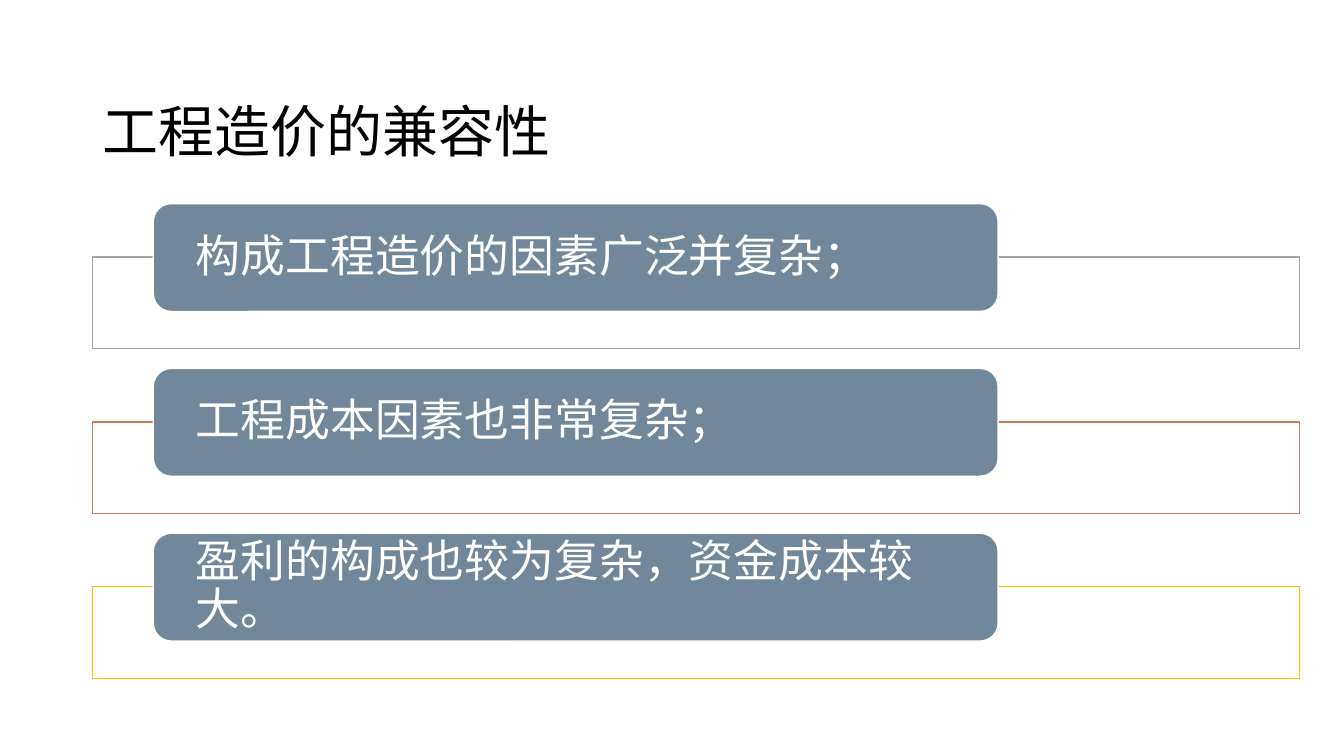
from pptx import Presentation
from pptx.dml.color import RGBColor
from pptx.enum.shapes import MSO_SHAPE
from pptx.enum.text import MSO_ANCHOR, PP_ALIGN
from pptx.oxml.ns import qn
from pptx.util import Inches, Pt

RECTANGLE = MSO_SHAPE.RECTANGLE
ROUNDED = MSO_SHAPE.ROUNDED_RECTANGLE
MIDDLE = MSO_ANCHOR.MIDDLE
LEFT = PP_ALIGN.LEFT

TITLE = "工程造价的兼容性"
FACTORS = [
    ("构成工程造价的因素广泛并复杂；", "A5A5A5"),
    ("工程成本因素也非常复杂；", "C97C5C"),
    ("盈利的构成也较为复杂，资金成本较大。", "FFC000"),
]

THEME = {
    "title_color": "000000", "title_size": 40, "title_font": "Times New Roman",
    "label_color": "FFFFFF", "label_size": 32, "label_font": "Noto Sans CJK SC",
    "east_asian_font": "Noto Sans CJK SC",
    "label_fill": "728799", "white": "FFFFFF", "line_width": 1,
}

FRAME_LEFT, FRAME_WIDTH, FRAME_HEIGHT = 0.92, 11.97, 0.91
LABEL_LEFT, LABEL_WIDTH, LABEL_HEIGHT = 1.52, 8.38, 1.07
FIRST_LABEL_TOP, ROW_PITCH = 2.02, 1.635
FRAME_DROP = 0.53
LABEL_INSET = 0.37


def add_box(slide, kind, left, top, width, height, fill, line):
    box = slide.shapes.add_shape(
        kind, Inches(left), Inches(top), Inches(width), Inches(height))
    box.shadow.inherit = False
    box.fill.solid()
    box.fill.fore_color.rgb = RGBColor.from_string(fill)
    box.line.color.rgb = RGBColor.from_string(line)
    box.line.width = Pt(THEME["line_width"])
    return box


def write(frame, text, role, spacing):
    """Put one left-aligned paragraph in the frame, styled by theme role."""
    frame.text = text
    frame.word_wrap = True
    frame.vertical_anchor = MIDDLE
    paragraph = frame.paragraphs[0]
    paragraph.alignment = LEFT
    paragraph.line_spacing = spacing
    font = paragraph.runs[0].font
    font.name = THEME[role + "_font"]
    font.size = Pt(THEME[role + "_size"])
    font.color.rgb = RGBColor.from_string(THEME[role + "_color"])
    east_asian = font._element.makeelement(
        qn("a:ea"), {"typeface": THEME["east_asian_font"]})
    font._element.find(qn("a:latin")).addnext(east_asian)


def add_factor(slide, row, text, accent):
    label_top = FIRST_LABEL_TOP + row * ROW_PITCH
    add_box(slide, RECTANGLE, FRAME_LEFT, label_top + FRAME_DROP,
            FRAME_WIDTH, FRAME_HEIGHT, THEME["white"], accent)
    label = add_box(slide, ROUNDED, LABEL_LEFT, label_top,
                    LABEL_WIDTH, LABEL_HEIGHT, THEME["label_fill"], THEME["white"])
    frame = label.text_frame
    frame.margin_left = frame.margin_right = Inches(LABEL_INSET)
    frame.margin_top = frame.margin_bottom = 0
    write(frame, text, "label", 0.9)


def main():
    presentation = Presentation()
    presentation.slide_width = Inches(13.33)
    presentation.slide_height = Inches(7.5)
    slide = presentation.slides.add_slide(presentation.slide_layouts[6])
    title = slide.shapes.add_textbox(
        Inches(FRAME_LEFT), Inches(0.4), Inches(11.5), Inches(1.45))
    write(title.text_frame, TITLE, "title", 1.5)
    for row, (text, accent) in enumerate(FACTORS):
        add_factor(slide, row, text, accent)
    presentation.save("out.pptx")


if __name__ == "__main__":
    main()
